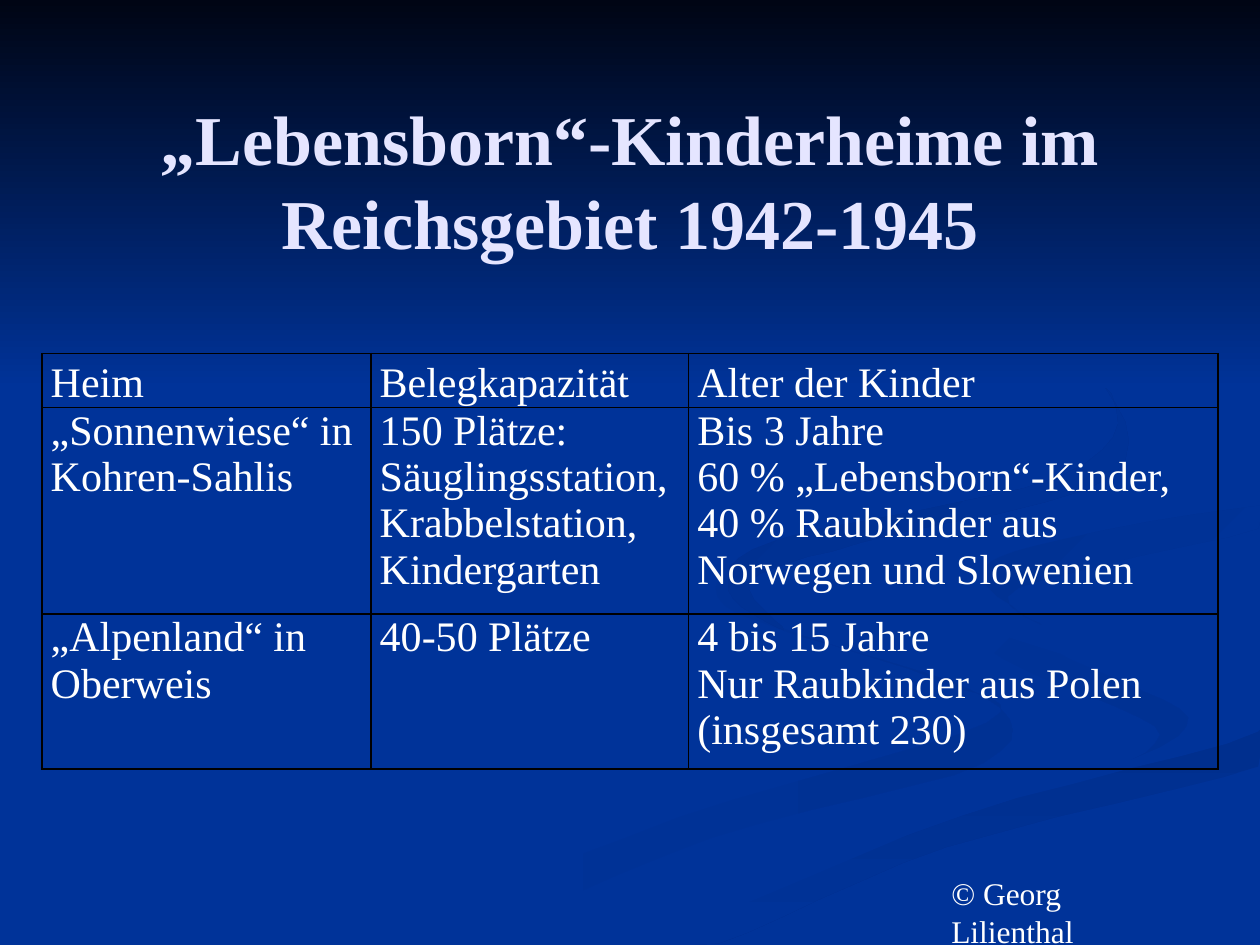
from dataclasses import dataclass

from lxml.etree import SubElement
from pptx import Presentation
from pptx.dml.color import RGBColor
from pptx.enum.shapes import MSO_SHAPE
from pptx.enum.text import MSO_ANCHOR, MSO_AUTO_SIZE, PP_ALIGN
from pptx.oxml.ns import qn
from pptx.slide import Slide
from pptx.util import Pt

BLUE = RGBColor(0x00, 0x33, 0x99)
NIGHT = RGBColor(0x00, 0x05, 0x14)
SHADE = RGBColor(0x00, 0x2F, 0x8E)
SOFT_SHADE = RGBColor(0x00, 0x31, 0x93)
LAVENDER = RGBColor(0xE5, 0xE5, 0xFF)
WHITE = RGBColor(0xFF, 0xFF, 0xFF)
BLACK = RGBColor(0x00, 0x00, 0x00)

SLIDE_WIDTH, SLIDE_HEIGHT = 720, 540

# Each ribbon: start colour, end colour, clockwise angle, outline to be smoothed
RIBBONS = [
    (BLUE, SOFT_SHADE, 0, [
        (562, 398), (442, 357), (414, 330), (422, 351), (534, 388), (564, 413),
        (388, 467), (216, 539), (260, 539), (406, 479), (562, 436)]),
    (BLUE, SOFT_SHADE, 45, [
        (679, 410), (612, 377), (521, 334), (574, 377), (660, 415), (644, 436)]),
    (SHADE, BLUE, 90, [
        (362, 539), (411, 539), (541, 484), (719, 438), (719, 418), (550, 466)]),
    (BLUE, BLUE, 0, [
        (522, 334), (670, 398), (649, 433), (477, 481), (343, 539), (374, 538),
        (550, 466), (719, 418), (719, 387), (562, 331), (719, 289), (719, 279)]),
    (SOFT_SHADE, BLUE, 45, [
        (562, 331), (595, 357), (582, 336), (719, 302), (719, 289), (591, 312)]),
    (SHADE, BLUE, 45, [
        (492, 310), (636, 272), (622, 210), (549, 168), (635, 225), (606, 272),
        (443, 309), (416, 337), (448, 360), (429, 332)]),
]

# Paragraphs within a cell are separated by line breaks
HOMES = [
    ["Heim", "Belegkapazität", "Alter der Kinder"],
    ["„Sonnenwiese“ in Kohren-Sahlis",
     "150 Plätze: Säuglingsstation, Krabbelstation, Kindergarten",
     "Bis 3 Jahre\n60 % „Lebensborn“-Kinder, 40 % Raubkinder aus Norwegen und Slowenien"],
    ["„Alpenland“ in Oberweis", "40-50 Plätze",
     "4 bis 15 Jahre\nNur Raubkinder aus Polen (insgesamt 230)"],
]
COLUMN_WIDTHS = [188, 181.5, 302.5]
ROW_HEIGHTS = [31, 118, 88.5]


def smooth_outline(corners, steps=6):
    """Return points of a closed Catmull-Rom curve, kept on the slide."""
    points = []
    count = len(corners)
    for i in range(count):
        neighbours = [corners[(i + k) % count] for k in (-1, 0, 1, 2)]
        for step in range(steps):
            t = step / steps
            x, y = (
                b + t * (c - a) / 2 + t**2 * (2 * a - 5 * b + 4 * c - d) / 2
                + t**3 * (3 * b - a - 3 * c + d) / 2
                for a, b, c, d in zip(*neighbours))
            points.append((min(x, SLIDE_WIDTH), min(y, SLIDE_HEIGHT)))
    return points


@dataclass
class SlideBuilder:
    slide: Slide
    font_name: str = "Times New Roman"

    def style(self, paragraph, size, color=WHITE, bold=False):
        for run in paragraph.runs:
            font = run.font
            font.name, font.size, font.bold = self.font_name, Pt(size), bold
            font.color.rgb = color

    def background(self, color):
        fill = self.slide.background.fill
        fill.solid()
        fill.fore_color.rgb = color

    def title(self, text, left, top, width, height):
        title = self.slide.shapes.title
        title.left, title.top = Pt(left), Pt(top)
        title.width, title.height = Pt(width), Pt(height)
        frame = title.text_frame
        frame.text = text
        frame.word_wrap = True
        frame.auto_size = MSO_AUTO_SIZE.NONE
        frame.vertical_anchor = MSO_ANCHOR.MIDDLE
        frame.paragraphs[0].alignment = PP_ALIGN.CENTER
        self.style(frame.paragraphs[0], 40, LAVENDER, bold=True)

    def decorate(self, shape, start, end, angle):
        """Fill a backdrop shape with a clockwise gradient and put it behind the title."""
        shape.shadow.inherit = False
        shape.line.fill.background()
        if start == end:
            shape.fill.solid()
            shape.fill.fore_color.rgb = start
        else:
            shape.fill.gradient()
            shape.fill.gradient_angle = 360 - angle
            for stop, color in zip(shape.fill.gradient_stops, (start, end)):
                stop.color.rgb = color
        self.slide.shapes.title.element.addprevious(shape.element)

    def ribbon(self, start, end, angle, corners):
        outline = smooth_outline(corners)
        builder = self.slide.shapes.build_freeform(*outline[0], scale=Pt(1))
        builder.add_line_segments(outline[1:], close=True)
        self.decorate(builder.convert_to_shape(), start, end, angle)

    def band(self, start, end, height):
        band = self.slide.shapes.add_shape(
            MSO_SHAPE.RECTANGLE, 0, 0, Pt(SLIDE_WIDTH), Pt(height))
        self.decorate(band, start, end, 90)

    def table(self, rows, left, top, widths, heights):
        table = self.slide.shapes.add_table(
            len(rows), len(widths), Pt(left), Pt(top),
            Pt(sum(widths)), Pt(sum(heights))).table
        table.first_row = table.horz_banding = False
        for column, width in zip(table.columns, widths):
            column.width = Pt(width)
        for row, height in zip(table.rows, heights):
            row.height = Pt(height)
        for r, texts in enumerate(rows):
            for c, text in enumerate(texts):
                self.cell(table.cell(r, c), text, is_header=r == 0)

    def cell(self, cell, text, is_header):
        cell.margin_left = cell.margin_right = Pt(5)
        cell.margin_top = cell.margin_bottom = 0
        cell.text = text
        paragraphs = cell.text_frame.paragraphs
        for paragraph in paragraphs:
            paragraph.line_spacing = 1.15 if is_header else 1.0
            paragraph.space_after = Pt(8 if len(paragraphs) == 1 else 0)
            self.style(paragraph, 24)
        self.borders(cell)
        cell.fill.background()

    def borders(self, cell):
        properties = cell._tc.get_or_add_tcPr()
        for side in ("a:lnL", "a:lnR", "a:lnT", "a:lnB"):
            line = SubElement(properties, qn(side), w=str(Pt(1)))
            fill = SubElement(line, qn("a:solidFill"))
            SubElement(fill, qn("a:srgbClr"), val=str(BLACK))

    def text(self, text, left, top, width, height, size):
        frame = self.slide.shapes.add_textbox(
            Pt(left), Pt(top), Pt(width), Pt(height)).text_frame
        frame.word_wrap = True
        frame.text = text
        self.style(frame.paragraphs[0], size)


def main():
    presentation = Presentation()
    presentation.slide_width = Pt(SLIDE_WIDTH)
    presentation.slide_height = Pt(SLIDE_HEIGHT)
    builder = SlideBuilder(presentation.slides.add_slide(presentation.slide_layouts[5]))
    builder.background(BLUE)
    for ribbon in RIBBONS:
        builder.ribbon(*ribbon)
    builder.band(NIGHT, BLUE, 222)
    builder.title("„Lebensborn“-Kinderheime im Reichsgebiet 1942-1945", 36, 43, 648, 119)
    builder.table(HOMES, 24, 202, COLUMN_WIDTHS, ROW_HEIGHTS)
    builder.text("© Georg Lilienthal", 536.5, 496, 147.5, 29, 18)
    presentation.save("out.pptx")


if __name__ == "__main__":
    main()
